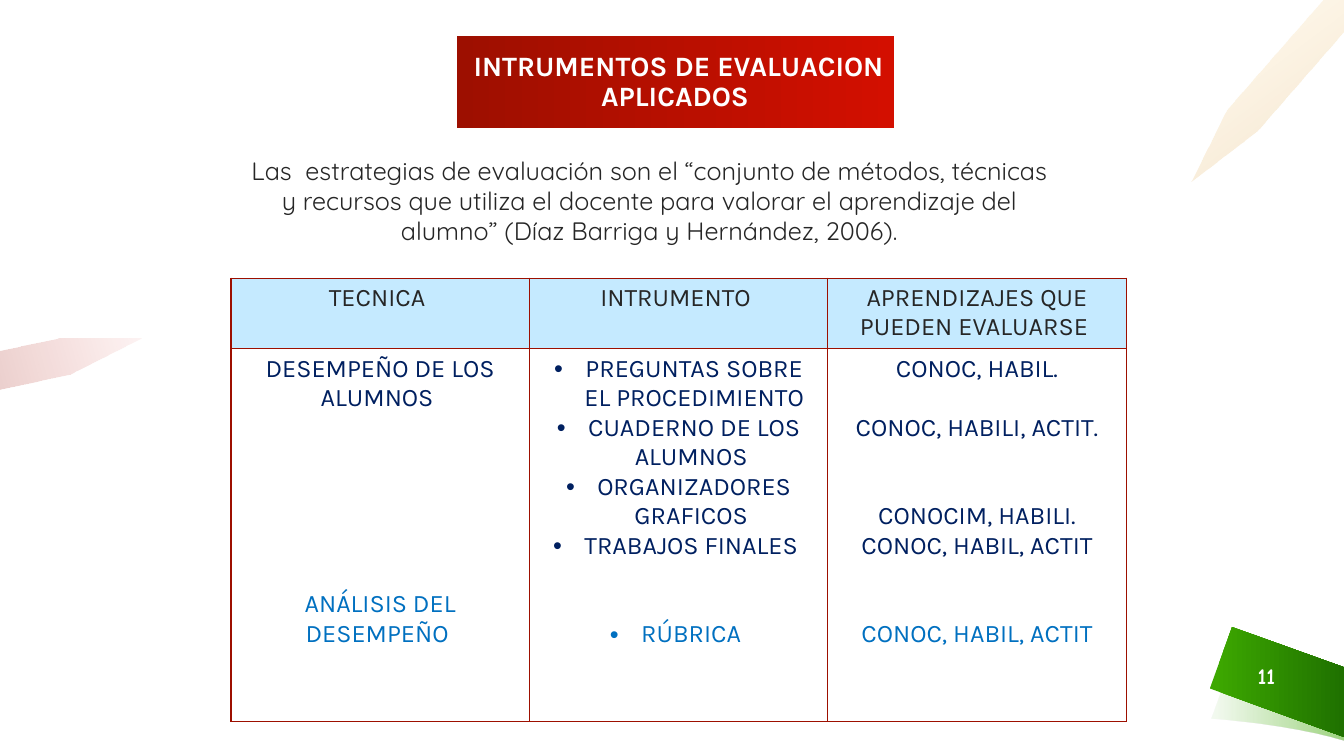
"""Build the slide on the evaluation instruments applied."""
from lxml import etree
from pptx import Presentation
from pptx import util as u
from pptx.dml.color import RGBColor
from pptx.enum import shapes, text
from pptx.oxml.ns import qn

W, H = 13.33, 7.5
RED, DARK_RED, GREEN, DARK_GREEN = "D30F00", "9D0F00", "3DA800", "1F7100"
WHITE, INK, NAVY, BLUE, SKY = "FFFFFF", "262626", "002060", "0070C0", "C5EAFF"

TITLE = "INTRUMENTOS DE EVALUACION APLICADOS "
QUOTE = ("Las  estrategias de evaluación son el “conjunto de métodos, técnicas y recursos "
         "que utiliza el docente para valorar el aprendizaje del alumno” "
         "(Díaz Barriga y Hernández, 2006).")
PAGE = "11"

HEADERS = ["TECNICA ", "INTRUMENTO ", "APRENDIZAJES QUE PUEDEN EVALUARSE "]
# Each entry: wording, colour, free lines above it
BODY = [
    [("DESEMPEÑO DE LOS ALUMNOS ", NAVY, 0), ("ANÁLISIS DEL DESEMPEÑO ", BLUE, 6)],
    [("PREGUNTAS SOBRE EL PROCEDIMIENTO", NAVY, 0), ("CUADERNO DE LOS ALUMNOS ", NAVY, 0),
     ("ORGANIZADORES GRAFICOS ", NAVY, 0), ("TRABAJOS FINALES ", NAVY, 0),
     ("RÚBRICA ", BLUE, 2)],
    [("CONOC, HABIL.", NAVY, 0), ("CONOC, HABILI, ACTIT.", NAVY, 1),
     ("CONOCIM, HABILI.", NAVY, 2), ("CONOC, HABIL, ACTIT", NAVY, 0),
     ("CONOC, HABIL, ACTIT", BLUE, 2)],
]
BULLET_COLUMN = 1
TABLE_LEFT, TABLE_TOP, COLUMN, ROWS = 2.29, 2.76, 2.96, (0.7, 3.7)
LINE_PT = 21.05
INDENT = 0.31


def curve(a, b, c, d, steps=12):
    """Return points along a cubic curve."""
    ts = [i / steps for i in range(steps + 1)]
    return [tuple((1 - t) ** 3 * p + 3 * (1 - t) ** 2 * t * q + 3 * (1 - t) * t * t * m + t ** 3 * n
                  for p, q, m, n in zip(a, b, c, d)) for t in ts]


SHADE = (curve((12.02, 7.13), (12.02, 7.13), (12.78, 7.18), (W, 7.35))
         + curve((W, 6.68), (12.72, 6.51), (12.24, 6.52), (12.24, 6.52)))
DECOR = [
    (SHADE, [(3, GREEN, 6), (100, GREEN, 50)], 0),
    ([(W, 6.62), (12.22, 6.22), (12, 6.83), (W, 7.31)],
     [(3, GREEN, 100), (100, DARK_GREEN, 100)], 0),
    ([(1.4, 3.36), (0.58, 3.36), (0, 3.48), (0, 3.86), (0.7, 3.71)],
     [(0, RED, 5), (100, DARK_RED, 20)], 164),
    ([(13.12, 0), (12.17, 1.09), (11.82, 1.8), (12.47, 1.3), (W, 0.31), (W, 0)],
     [(0, "FFAA00", 5), (100, "C07400", 20)], 53),
]


def color(value):
    """Turn a hex string into a colour."""
    return RGBColor.from_string(value)


def child(parent, tag, **attrs):
    """Add a drawing element under a parent."""
    return etree.SubElement(parent, qn("a:" + tag), {k: str(v) for k, v in attrs.items()})


def paint(sp, stops, angle):
    """Give a shape a linear gradient with no line or shadow."""
    sp.shadow.inherit = False
    sp.line.fill.background()
    sp.fill.background()
    props = sp._element.spPr
    grad = etree.Element(qn("a:gradFill"), rotWithShape="1")
    stop_list = child(grad, "gsLst")
    for pos, rgb, opacity in stops:
        stop = child(child(stop_list, "gs", pos=pos * 1000), "srgbClr", val=rgb)
        child(stop, "alpha", val=opacity * 1000)
    child(grad, "lin", ang=angle * 60000, scaled=0)
    props.replace(props.find(qn("a:noFill")), grad)


def style(p, size, name, rgb, bold=False):
    """Centre a paragraph and format its runs."""
    p.alignment = text.PP_ALIGN.CENTER
    for r in p.runs:
        r.font.size, r.font.name, r.font.bold = u.Pt(size), name, bold
        r.font.color.rgb = color(rgb)


def add_outline(s, points, stops, angle):
    """Draw a closed gradient outline."""
    pts = [(u.Inches(x), u.Inches(y)) for x, y in points]
    builder = s.shapes.build_freeform(*pts[0])
    builder.add_line_segments(pts[1:], close=True)
    paint(builder.convert_to_shape(), stops, angle)


def add_label(s, box, words, *look, anchor=text.MSO_ANCHOR.TOP):
    """Add a wrapped text box."""
    tf = s.shapes.add_textbox(*map(u.Inches, box)).text_frame
    tf.word_wrap, tf.vertical_anchor = True, anchor
    tf.text = words
    style(tf.paragraphs[0], *look)


def add_title(s):
    """Add the red title band."""
    sp = s.shapes.add_shape(shapes.MSO_SHAPE.RECTANGLE, *map(u.Inches, (4.53, 0.36, 4.34, 0.91)))
    paint(sp, [(0, RED, 100), (100, DARK_RED, 100)], 180)
    tf = sp.text_frame
    tf.word_wrap, tf.vertical_anchor = True, text.MSO_ANCHOR.MIDDLE
    tf.margin_left, tf.margin_right = u.Inches(0.16), u.Inches(0.1)
    tf.text = TITLE
    tf.paragraphs[0].line_spacing = 0.9
    style(tf.paragraphs[0], 20, "Karla", WHITE, True)


def fill_cell(cell, entries, fill=None, bullets=False):
    """Write and frame one table cell."""
    if fill:
        cell.fill.solid()
        cell.fill.fore_color.rgb = color(fill)
    else:
        cell.fill.background()
    props = cell._tc.get_or_add_tcPr()
    for i, side in enumerate(("lnL", "lnR", "lnT", "lnB")):
        ln = etree.Element(qn("a:" + side), w=str(u.Pt(1)))
        child(child(ln, "solidFill"), "srgbClr", val=DARK_RED)
        props.insert(i, ln)
    tf = cell.text_frame
    tf.text = "\n".join(words for words, _, _ in entries)
    for p, (_, rgb, gap) in zip(tf.paragraphs, entries):
        if bullets:
            ppr = p._p.get_or_add_pPr()
            ppr.set("marL", str(u.Inches(INDENT)))
            ppr.set("indent", str(-u.Inches(INDENT)))
            child(ppr, "buFont", typeface="Arial")
            child(ppr, "buChar", char="•")
        if gap:
            p.space_before = u.Pt(gap * LINE_PT)
        style(p, 18, "Karla", rgb)


def add_grid(s):
    """Add the table of techniques and instruments."""
    box = (TABLE_LEFT, TABLE_TOP, COLUMN * len(HEADERS), sum(ROWS))
    table = s.shapes.add_table(len(ROWS), len(HEADERS), *map(u.Inches, box)).table
    table.first_row = table.horz_banding = False
    for row, height in zip(table.rows, ROWS):
        row.height = u.Inches(height)
    for i, (header, entries) in enumerate(zip(HEADERS, BODY)):
        table.columns[i].width = u.Inches(COLUMN)
        fill_cell(table.cell(0, i), [(header, INK, 0)], SKY)
        fill_cell(table.cell(1, i), entries, bullets=i == BULLET_COLUMN)


def main():
    """Assemble and save the slide."""
    prs = Presentation()
    prs.slide_width, prs.slide_height = u.Inches(W), u.Inches(H)
    s = prs.slides.add_slide(prs.slide_layouts[6])
    for points, stops, angle in DECOR:
        add_outline(s, points, stops, angle)
    add_title(s)
    add_label(s, (12.21, 6.5, 0.7, 0.4), PAGE, 16, "Comic Neue", WHITE, True,
              anchor=text.MSO_ANCHOR.MIDDLE)
    add_label(s, (TABLE_LEFT, 1.49, 8.3, 1.04), QUOTE, 18, "Quicksand", INK)
    add_grid(s)
    prs.save("out.pptx")


if __name__ == "__main__":
    main()
